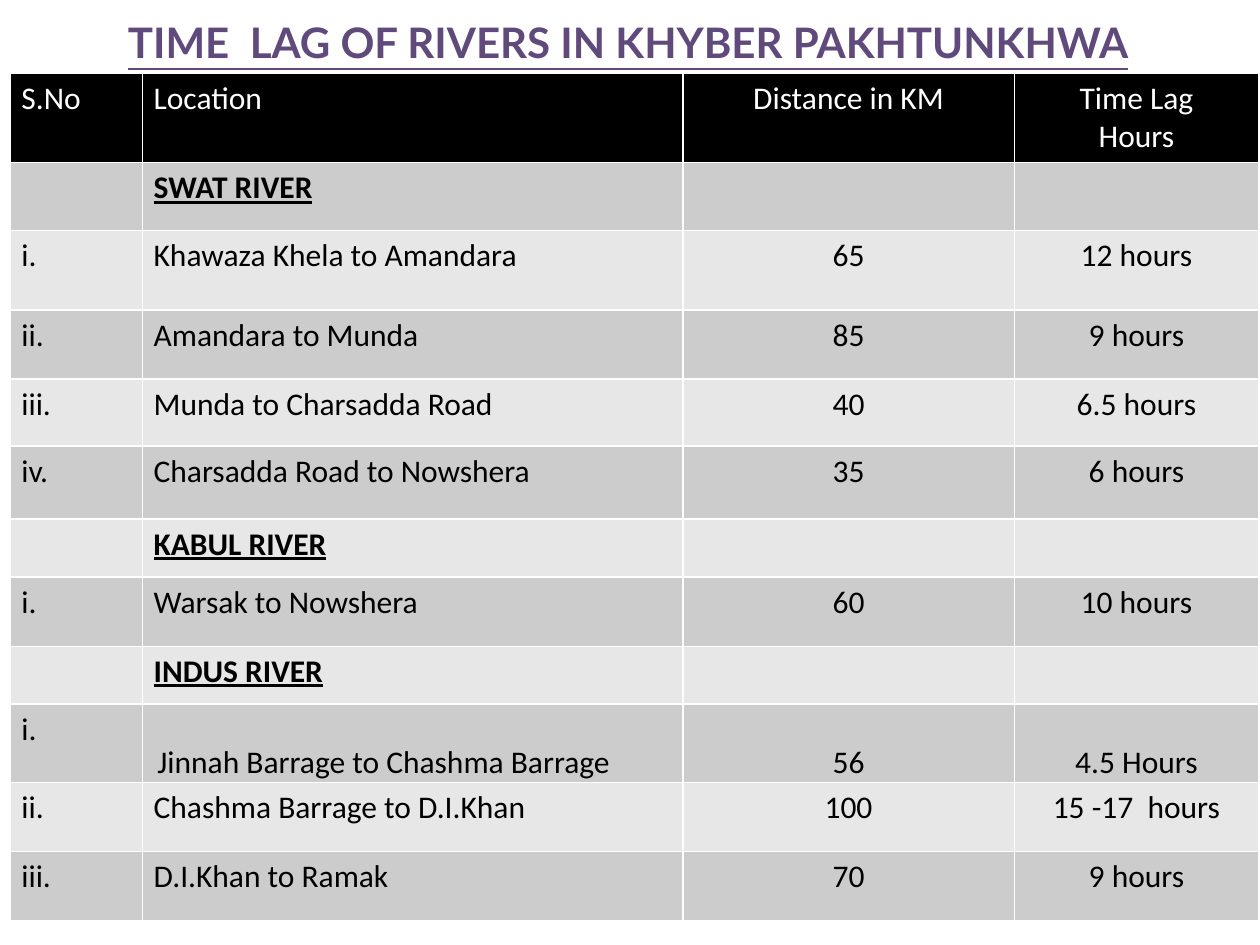
"""Builds the slide on the time lag of rivers in Khyber Pakhtunkhwa."""
import pptx
import pptx.dml.color
import pptx.enum.text
import pptx.oxml
import pptx.oxml.ns
import pptx.util

Inches, Pt = pptx.util.Inches, pptx.util.Pt
RGBColor = pptx.dml.color.RGBColor
PP_ALIGN = pptx.enum.text.PP_ALIGN
MSO_ANCHOR = pptx.enum.text.MSO_ANCHOR

PURPLE = RGBColor(0x60, 0x4A, 0x7B)
BLACK = RGBColor(0x00, 0x00, 0x00)
WHITE = RGBColor(0xFF, 0xFF, 0xFF)
DARK_BAND = RGBColor(0xCC, 0xCC, 0xCC)
LIGHT_BAND = RGBColor(0xE7, 0xE7, 0xE7)

TITLE = "TIME  LAG OF RIVERS IN KHYBER PAKHTUNKHWA"
HEADER = ("S.No", "Location", "Distance in KM", "Time Lag\nHours")
RIVERS = [
    ("SWAT RIVER", [
        ("i.", "Khawaza Khela to Amandara", "65", "12 hours"),
        ("ii.", "Amandara to Munda", "85", "9 hours"),
        ("iii.", "Munda to Charsadda Road", "40", "6.5 hours"),
        ("iv.", "Charsadda Road to Nowshera", "35", "6 hours"),
    ]),
    ("KABUL RIVER", [("i.", "Warsak to Nowshera", "60", "10 hours")]),
    ("INDUS RIVER", [
        ("i.", "Jinnah Barrage to Chashma Barrage", "56", "4.5 Hours"),
        ("ii.", "Chashma Barrage to D.I.Khan", "100", "15 -17  hours"),
        ("iii.", "D.I.Khan to Ramak", "70", "9 hours"),
    ]),
]
COL_WIDTHS = (1.05, 4.29, 2.63, 1.94)
ROW_HEIGHTS = (0.71, 0.54, 0.63, 0.55, 0.53, 0.58, 0.46, 0.55, 0.46, 0.62, 0.55, 0.55)
BOTTOM_ROW = 9


def set_borders(cell, color, points):
    tcPr = cell._tc.get_or_add_tcPr()
    for i, side in enumerate(("lnL", "lnR", "lnT", "lnB")):
        tcPr.insert(i, pptx.oxml.parse_xml(
            f'<a:{side} {pptx.oxml.ns.nsdecls("a")} w="{Pt(points)}"><a:solidFill>'
            f'<a:srgbClr val="{color}"/></a:solidFill></a:{side}>'))


def style_text(p, font, size, color, align, heading=False):
    p.alignment = align
    p.font.name = font
    p.font.size = Pt(size)
    p.font.color.rgb = color
    p.font.bold = p.font.underline = heading


def add_title(s):
    tf = s.shapes.add_textbox(Inches(0.33), Inches(0.08), Inches(9.31), Inches(0.58)).text_frame
    tf.word_wrap = True
    p = tf.paragraphs[0]
    p.text = TITLE
    style_text(p, "Lato", 24, PURPLE, PP_ALIGN.CENTER, heading=True)


def add_lag_table(s):
    rows = [HEADER]
    for river, reaches in RIVERS:
        rows += [("", river, "", ""), *reaches]
    headings = [river for river, _ in RIVERS]
    table = s.shapes.add_table(
        len(rows), len(HEADER), Inches(0.08), Inches(0.58),
        Inches(sum(COL_WIDTHS)), Inches(sum(ROW_HEIGHTS))).table
    for col, width in zip(table.columns, COL_WIDTHS):
        col.width = Inches(width)
    for r, (row, height) in enumerate(zip(rows, ROW_HEIGHTS)):
        table.rows[r].height = Inches(height)
        band = BLACK if r == 0 else DARK_BAND if r % 2 else LIGHT_BAND
        for c, text in enumerate(row):
            cell = table.cell(r, c)
            cell.fill.solid()
            cell.fill.fore_color.rgb = band
            set_borders(cell, WHITE, 1)
            cell.margin_left = cell.margin_right = Inches(0.09)
            if r == BOTTOM_ROW and c > 0:
                cell.vertical_anchor = MSO_ANCHOR.BOTTOM
                cell.margin_left = Inches(0.12 if c == 1 else 0.01)
                cell.margin_right = cell.margin_top = Inches(0.01)
                cell.margin_bottom = 0
            cell.text_frame.text = text
            for p in cell.text_frame.paragraphs:
                style_text(p, "Calibri", 18, BLACK if r else WHITE,
                           PP_ALIGN.CENTER if c > 1 else PP_ALIGN.LEFT, text in headings)


def main():
    prs = pptx.Presentation()
    prs.slide_width, prs.slide_height = Inches(10), Inches(7.5)
    s = prs.slides.add_slide(prs.slide_layouts[6])
    add_title(s)
    add_lag_table(s)
    prs.save("out.pptx")


if __name__ == "__main__":
    main()
